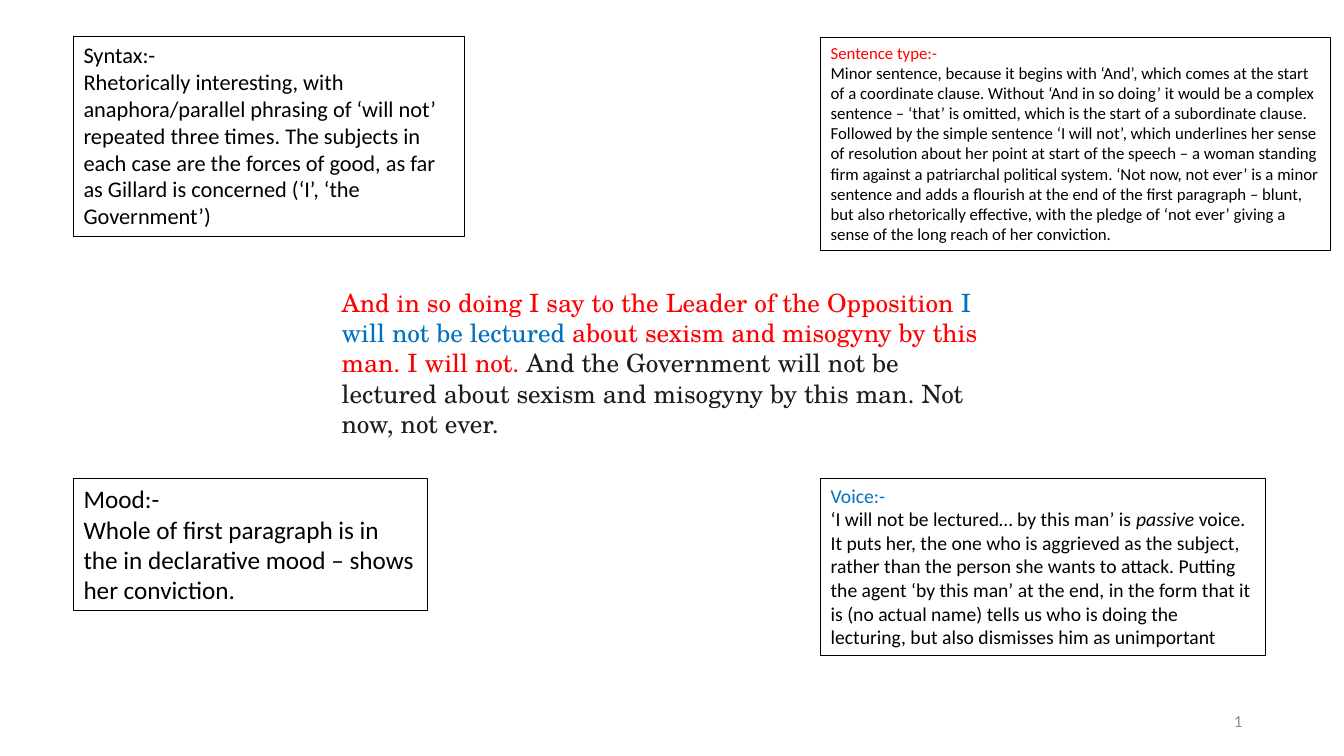
from dataclasses import dataclass

from pptx import Presentation
from pptx.dml.color import RGBColor
from pptx.enum.text import MSO_ANCHOR, MSO_AUTO_SIZE, PP_ALIGN
from pptx.util import Inches, Pt


@dataclass(frozen=True)
class Theme:
    body_font: str = "Calibri"
    quote_font: str = "TeX Gyre Schola"
    black: str = "000000"
    red: str = "FF0000"
    blue: str = "0070C0"
    quote_ink: str = "1D1D1D"
    grey: str = "8C8C8C"
    quote_size: int = 18
    sentence_size: int = 12
    voice_size: int = 14
    mood_size: int = 18
    syntax_size: int = 16
    number_size: int = 12


theme = Theme()
presentation = Presentation()
presentation.slide_width = Inches(13.33)
presentation.slide_height = Inches(7.5)
slide = presentation.slides.add_slide(presentation.slide_layouts[6])


def add_text(place, paragraphs, font, size):
    """Add a wrapped text box; each paragraph is a list of (text, colour, italic)."""
    box = slide.shapes.add_textbox(*(Inches(length) for length in place))
    frame = box.text_frame
    frame.word_wrap = True
    frame.auto_size = MSO_AUTO_SIZE.NONE
    for index, pieces in enumerate(paragraphs):
        paragraph = frame.paragraphs[0] if index == 0 else frame.add_paragraph()
        for text, colour, italic in pieces:
            run = paragraph.add_run()
            run.text = text
            run.font.name = font
            run.font.size = Pt(size)
            run.font.italic = italic
            run.font.color.rgb = RGBColor.from_string(colour)
    return box


# Quotation in the centre
quotation = [
    ("And in so doing I say to the Leader of the Opposition ", theme.red, False),
    ("I will not be lectured ", theme.blue, False),
    ("about sexism and misogyny by this man. I will not. ", theme.red, False),
    ("And the Government will not be lectured about sexism and misogyny by this man. "
     "Not now, not ever.", theme.quote_ink, False),
]
quote = add_text((3.29, 2.8, 6.67, 1.31), [quotation], theme.quote_font, theme.quote_size)
quote.text_frame.paragraphs[0].space_after = Pt(12)

# Framed notes around it: place, size, heading, heading colour, body pieces (text, italic)
left_column, right_column, lower_row = 0.73, 8.14, 4.75
notes = [
    ((right_column, 0.37, 5.06, 2.12), theme.sentence_size, "Sentence type:-", theme.red, [
        ("Minor sentence, because it begins with ‘And’, which comes at the start of a "
         "coordinate clause. Without ‘And in so doing’ it would be a complex sentence – "
         "‘that’ is omitted, which is the start of a subordinate clause. Followed by the "
         "simple sentence ‘I will not’, which underlines her sense of resolution about her "
         "point at start of the speech – a woman standing firm against a patriarchal "
         "political system. ‘Not now, not ever’ is a minor sentence and adds a flourish at "
         "the end of the first paragraph – blunt, but also rhetorically effective, with the "
         "pledge of ‘not ever’ giving a sense of the long reach of her conviction.", False),
    ]),
    ((right_column, lower_row, 4.41, 1.75), theme.voice_size, "Voice:-", theme.blue, [
        ("‘I will not be lectured… by this man’ is ", False),
        ("passive ", True),
        ("voice. It puts her, the one who is aggrieved as the subject, rather than the "
         "person she wants to attack. Putting the agent ‘by this man’ at the end, in the "
         "form that it is (no actual name) tells us who is doing the lecturing, but also "
         "dismisses him as unimportant", False),
    ]),
    ((left_column, lower_row, 3.51, 1.31), theme.mood_size, "Mood:-", theme.black, [
        ("Whole of first paragraph is in the in declarative mood – shows her conviction.",
         False),
    ]),
    ((left_column, 0.36, 3.88, 1.99), theme.syntax_size, "Syntax:-", theme.black, [
        ("Rhetorically interesting, with anaphora/parallel phrasing of ‘will not’ repeated "
         "three times. The subjects in each case are the forces of good, as far as Gillard "
         "is concerned (‘I’, ‘the Government’)", False),
    ]),
]
for place, size, heading, heading_colour, body in notes:
    body_pieces = [(text, theme.black, italic) for text, italic in body]
    note = add_text(place, [[(heading, heading_colour, False)], body_pieces],
                    theme.body_font, size)
    note.line.color.rgb = RGBColor.from_string(theme.black)
    note.line.width = Pt(0.75)

# Slide number
number = add_text((9.42, 6.95, 3, 0.4), [[("1", theme.grey, False)]],
                  theme.body_font, theme.number_size)
number.text_frame.vertical_anchor = MSO_ANCHOR.MIDDLE
number.text_frame.paragraphs[0].alignment = PP_ALIGN.RIGHT

presentation.save("out.pptx")
